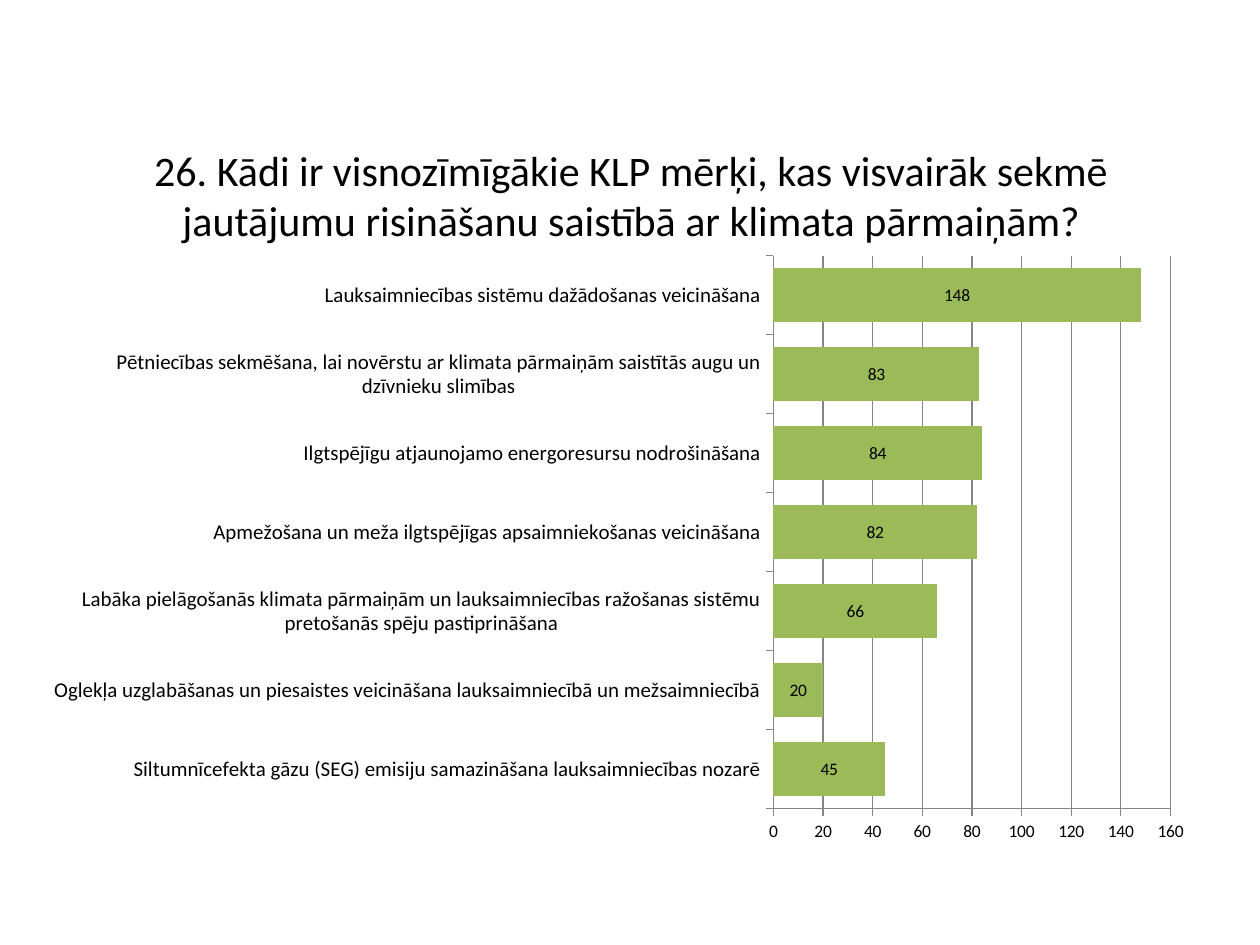
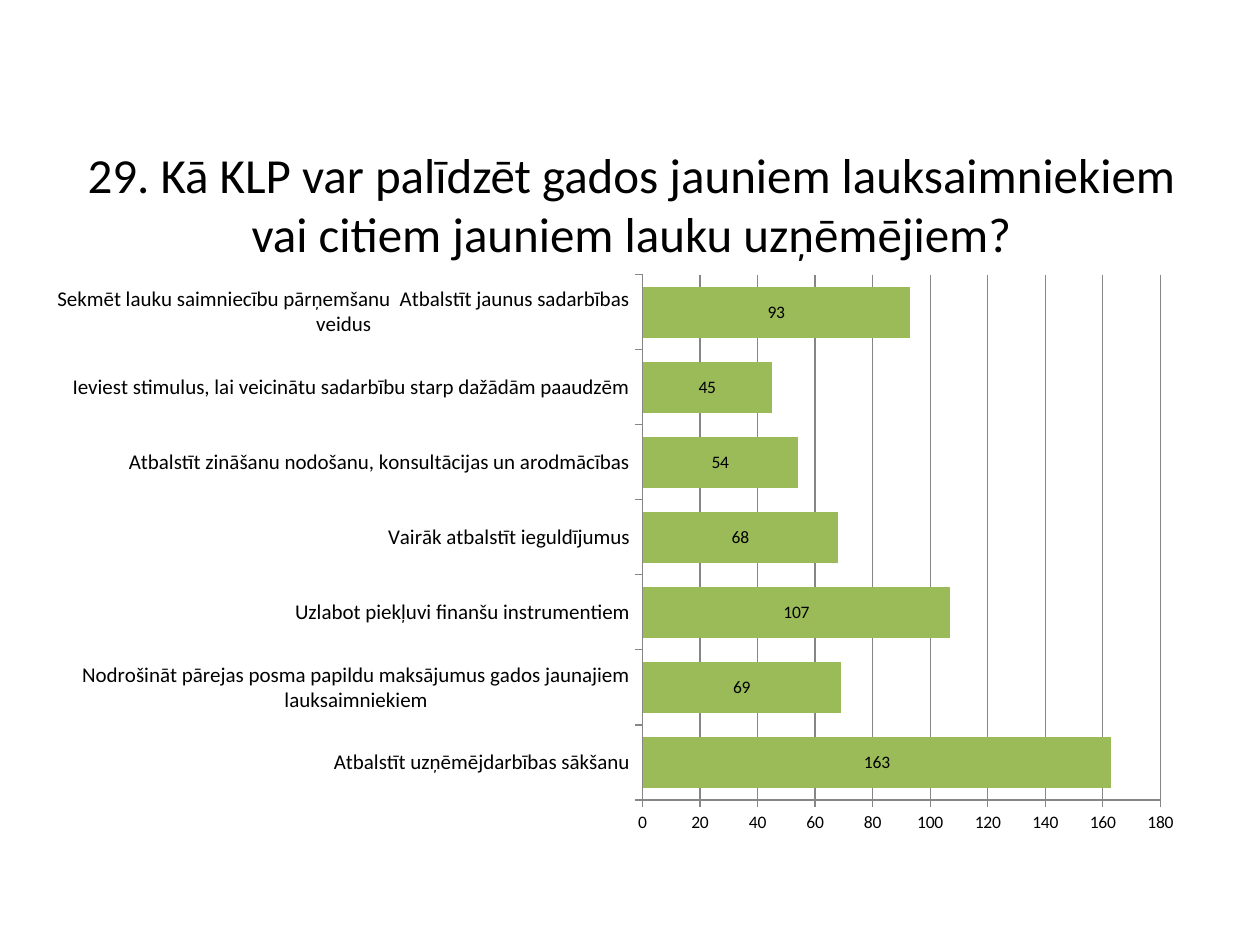
from lxml import etree
from pptx import Presentation
from pptx import util as u
from pptx.chart.data import CategoryChartData
from pptx.dml.color import RGBColor
from pptx.enum import chart as charts, text
from pptx.oxml import ns

FONT = "Calibri"
BLACK, GREEN, GRAY = "000000", "9BBB59", "868686"

CLIMATE_GOALS = [
    ("Siltumnīcefekta gāzu (SEG) emisiju samazināšana lauksaimniecības nozarē", 45),
    ("Oglekļa uzglabāšanas un piesaistes veicināšana lauksaimniecībā un mežsaimniecībā", 20),
    ("Labāka pielāgošanās klimata pārmaiņām un lauksaimniecības ražošanas sistēmu "
     "pretošanās spēju pastiprināšana", 66),
    ("Apmežošana un meža ilgtspējīgas apsaimniekošanas veicināšana", 82),
    ("Ilgtspējīgu atjaunojamo energoresursu nodrošināšana", 84),
    ("Pētniecības sekmēšana, lai novērstu ar klimata pārmaiņām saistītās augu un "
     "dzīvnieku slimības", 83),
    ("Lauksaimniecības sistēmu dažādošanas veicināšana", 148),
]
YOUNG_FARMER_SUPPORT = [
    ("Atbalstīt uzņēmējdarbības sākšanu", 163),
    ("Nodrošināt pārejas posma papildu maksājumus gados jaunajiem lauksaimniekiem", 69),
    ("Uzlabot piekļuvi finanšu instrumentiem", 107),
    ("Vairāk atbalstīt ieguldījumus", 68),
    ("Atbalstīt zināšanu nodošanu, konsultācijas un arodmācības", 54),
    ("Ieviest stimulus, lai veicinātu sadarbību starp dažādām paaudzēm", 45),
    ("Sekmēt lauku saimniecību pārņemšanu  Atbalstīt jaunus sadarbības veidus", 93),
]


def color(value):
    return RGBColor.from_string(value)


def style_font(font, size):
    font.name = FONT
    font.size = u.Pt(size)
    font.color.rgb = color(BLACK)


def add_title(page, question, top, size):
    box = page.shapes.add_textbox(u.Inches(0.51), u.Inches(top), u.Inches(9), u.Inches(1.25))
    frame = box.text_frame
    frame.word_wrap = True
    frame.vertical_anchor = text.MSO_ANCHOR.MIDDLE
    para = frame.paragraphs[0]
    para.alignment = text.PP_ALIGN.CENTER
    span = para.add_run()
    span.text = question
    style_font(span.font, size)


def style_axis(axis, size):
    axis.major_tick_mark = charts.XL_TICK_MARK.OUTSIDE
    axis.minor_tick_mark = charts.XL_TICK_MARK.NONE
    axis.format.line.color.rgb = color(GRAY)
    style_font(axis.tick_labels.font, size)


def place_plot(chart, frame, plot):
    area = chart.element.find(".//" + ns.qn("c:plotArea"))
    for previous in area.findall(ns.qn("c:layout")):
        area.remove(previous)
    layout = etree.Element(ns.qn("c:layout"))
    manual = etree.SubElement(layout, ns.qn("c:manualLayout"))
    left, top, width, height = frame
    settings = [
        ("layoutTarget", "inner"), ("xMode", "edge"), ("yMode", "edge"),
        ("x", (plot[0] - left) / width), ("y", (plot[1] - top) / height),
        ("w", plot[2] / width), ("h", plot[3] / height),
    ]
    for tag, value in settings:
        etree.SubElement(manual, ns.qn("c:" + tag)).set("val", str(value))
    area.insert(0, layout)


def add_answer_chart(page, answers, frame, plot, maximum, gap):
    data = CategoryChartData()
    data.categories = [answer for answer, count in answers]
    data.add_series("Series 1", [count for answer, count in answers])
    chart = page.shapes.add_chart(
        charts.XL_CHART_TYPE.BAR_STACKED, *map(u.Inches, frame), data).chart
    chart.has_title = False
    chart.has_legend = False
    style_font(chart.font, 10)
    place_plot(chart, frame, plot)

    style_axis(chart.category_axis, 12)
    counts = chart.value_axis
    style_axis(counts, 10)
    counts.minimum_scale = 0
    counts.maximum_scale = maximum
    counts.major_unit = 20
    counts.has_major_gridlines = True
    counts.major_gridlines.format.line.color.rgb = color(GRAY)

    bars = chart.plots[0]
    bars.gap_width = gap
    bars.overlap = 100
    bars.vary_by_categories = False
    fill = bars.series[0].format.fill
    fill.solid()
    fill.fore_color.rgb = color(GREEN)
    bars.has_data_labels = True
    bars.data_labels.show_value = True
    bars.data_labels.position = charts.XL_LABEL_POSITION.CENTER
    style_font(bars.data_labels.font, 10)


def main():
    deck = Presentation()
    deck.slide_width = u.Inches(10)
    deck.slide_height = u.Inches(7.5)
    blank = deck.slide_layouts[6]

    page = deck.slides.add_slide(blank)
    add_title(page, "26. Kādi ir visnozīmīgākie KLP mērķi, kas visvairāk sekmē "
              "jautājumu risināšanu saistībā ar klimata pārmaiņām?", 0.92, 24)
    add_answer_chart(page, CLIMATE_GOALS, (0.43, 1.94, 9.15, 4.84),
                     (6.13, 2.03, 3.16, 4.39), 160, 46)

    page = deck.slides.add_slide(blank)
    add_title(page, "29. Kā KLP var palīdzēt gados jauniem lauksaimniekiem "
              "vai citiem jauniem lauku uzņēmējiem?", 0.99, 28)
    add_answer_chart(page, YOUNG_FARMER_SUPPORT, (0.27, 2.1, 9.23, 4.6),
                     (5.1, 2.18, 4.11, 4.17), 180, 47)

    deck.save("out.pptx")


if __name__ == "__main__":
    main()
